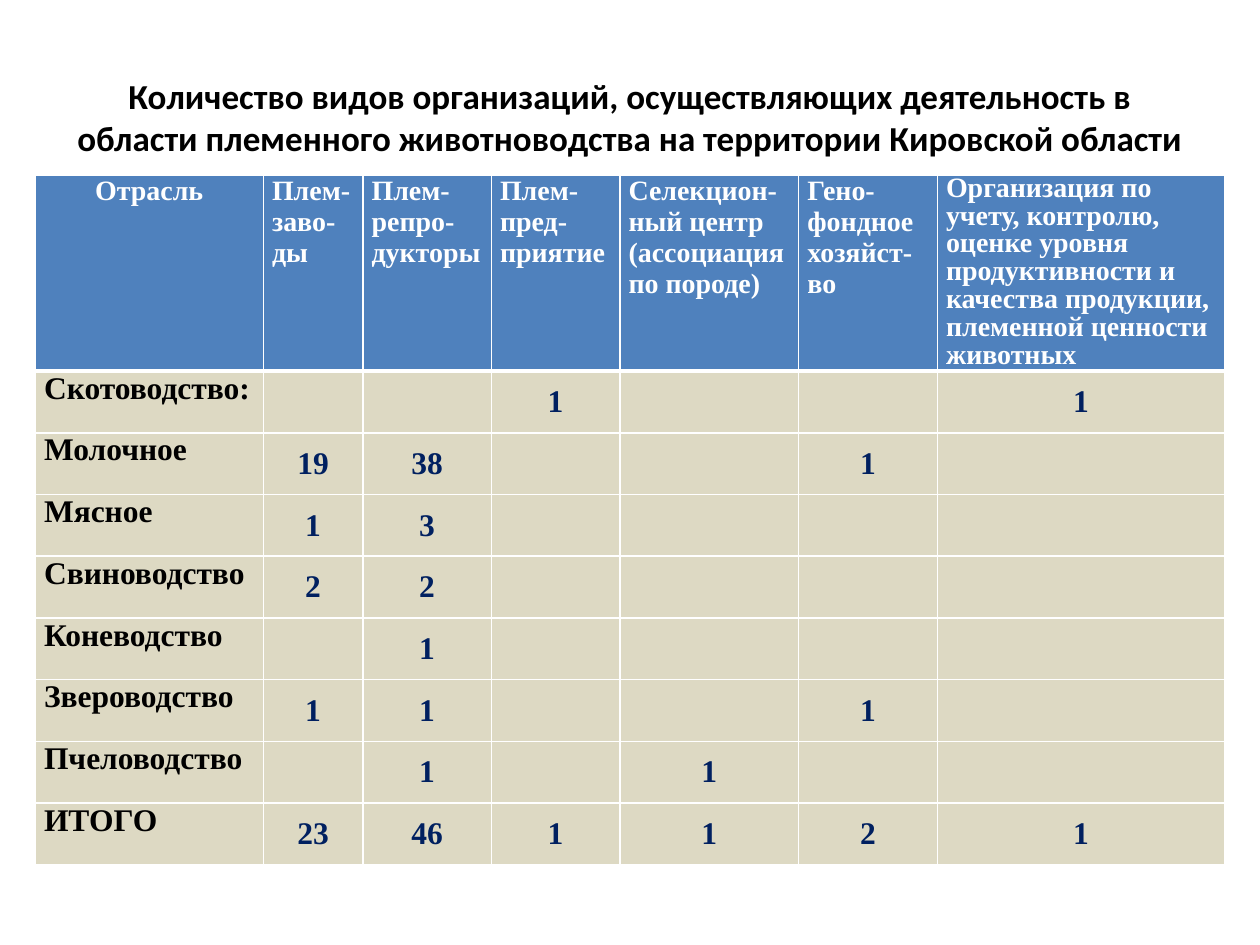
from lxml import etree
from pptx import Presentation
from pptx.dml.color import RGBColor
from pptx.enum.text import MSO_ANCHOR, PP_ALIGN
from pptx.oxml.ns import qn
from pptx.util import Inches, Pt

LEFT, MID = PP_ALIGN.LEFT, PP_ALIGN.CENTER
TOP, CENTER = MSO_ANCHOR.TOP, MSO_ANCHOR.MIDDLE

TITLE = ("Количество видов организаций, осуществляющих деятельность в "
         "области племенного животноводства на территории Кировской области")
HEADS = [
    ["Отрасль"],
    ["Плем-", "заво-", "ды"],
    ["Плем-", "репро-", "дукторы"],
    ["Плем-", "пред-", "приятие"],
    ["Селекцион-", "ный центр (ассоциация по породе)"],
    ["Гено-", "фондное хозяйст-", "во"],
    ["Организация по учету, контролю, оценке уровня продуктивности "
     "и качества продукции, племенной ценности животных"],
]
ROWS = [
    ("Скотоводство:", "", "", "1", "", "", "1"),
    ("Молочное", "19", "38", "", "", "1", ""),
    ("Мясное", "1", "3", "", "", "", ""),
    ("Свиноводство", "2", "2", "", "", "", ""),
    ("Коневодство", "", "1", "", "", "", ""),
    ("Звероводство", "1", "1", "", "", "1", ""),
    ("Пчеловодство", "", "1", "", "1", "", ""),
    ("ИТОГО", "23", "46", "1", "1", "2", "1"),
]
WIDTHS = [1.81, 0.79, 1.02, 1.02, 1.42, 1.1, 2.28]
HEAD_H, ROW_H = 1.1, 0.49
WHITE, BLUE, SAND = "FFFFFF", "4F81BD", "DDD9C3"
BLACK, NAVY = "000000", "002060"
SERIF = "Times New Roman"
PAD = {"margin_left": Inches(0.07), "margin_right": Inches(0.07),
       "margin_top": 0, "margin_bottom": 0}


def color(code):
    return RGBColor.from_string(code)


def assign(item, values):
    for name, value in values.items():
        setattr(item, name, value)


def write(frame, lines, tint, size, face, align):
    for i, line in enumerate(lines):
        para = frame.paragraphs[0] if i == 0 else frame.add_paragraph()
        para.alignment = align
        run = para.add_run()
        run.text = line
        assign(run.font, {"name": face, "size": Pt(size), "bold": True})
        run.font.color.rgb = color(tint)


def border(cell, edges):
    props = cell._tc.get_or_add_tcPr()
    for side, width in edges.items():
        line = etree.SubElement(props, qn(f"a:ln{side}"), w=str(Pt(width)))
        fill = etree.SubElement(line, qn("a:solidFill"))
        etree.SubElement(fill, qn("a:srgbClr"), val=WHITE)


def paint(cell, code):
    cell.fill.solid()
    cell.fill.fore_color.rgb = color(code)


def build():
    deck = Presentation()
    assign(deck, {"slide_width": Inches(10), "slide_height": Inches(7.5)})
    slide = deck.slides.add_slide(deck.slide_layouts[6])

    box = slide.shapes.add_textbox(Inches(0.5), Inches(0.3), Inches(9), Inches(1.25))
    assign(box.text_frame, {"word_wrap": True, "vertical_anchor": CENTER})
    write(box.text_frame, [TITLE], BLACK, 20, "Calibri", MID)

    table = slide.shapes.add_table(
        len(ROWS) + 1, len(HEADS),
        Inches(0.28), Inches(1.39), Inches(9.45), Inches(5.49)).table
    table.horz_banding = False
    for col, width in zip(table.columns, WIDTHS):
        col.width = Inches(width)
    for i, row in enumerate(table.rows):
        row.height = Inches(ROW_H if i else HEAD_H)

    for c, lines in enumerate(HEADS):
        cell = table.cell(0, c)
        border(cell, {"L": 1, "R": 1, "T": 1, "B": 3})
        paint(cell, BLUE)
        assign(cell, PAD)
        write(cell.text_frame, lines, WHITE, 16, SERIF, LEFT if c else MID)
    table.cell(0, len(HEADS) - 1).text_frame.paragraphs[0].line_spacing = Pt(16)

    for r, row in enumerate(ROWS, 1):
        for c, text in enumerate(row):
            cell = table.cell(r, c)
            border(cell, {"L": 1, "R": 1, "T": 3 if r == 1 else 1, "B": 1})
            paint(cell, SAND)
            if text:
                assign(cell, PAD)
                cell.vertical_anchor = CENTER if c else TOP
                write(cell.text_frame, [text], NAVY if c else BLACK, 18,
                      SERIF, MID if c else LEFT)

    deck.save("out.pptx")


if __name__ == "__main__":
    build()
